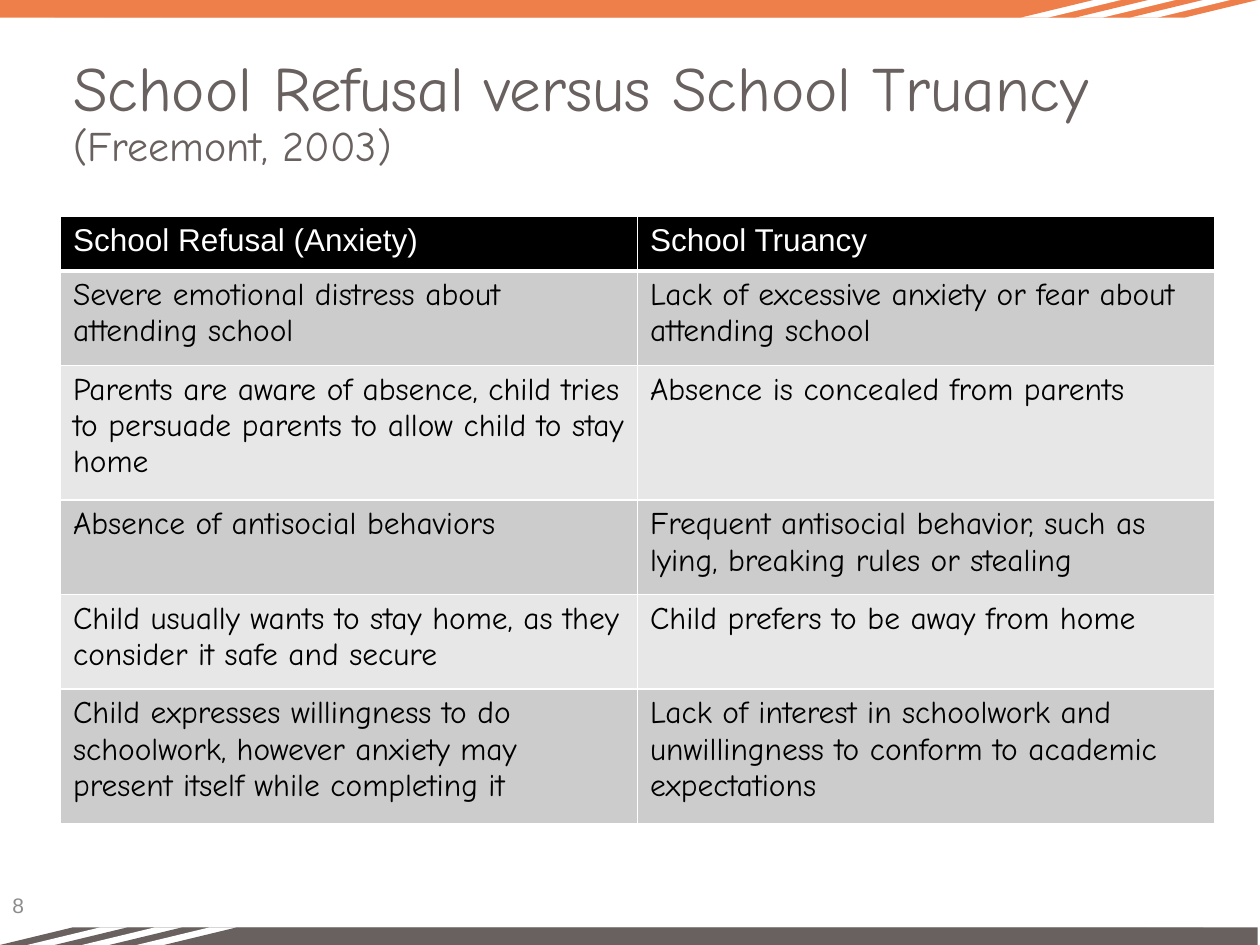
from lxml import etree
from pptx import Presentation
from pptx.dml.color import RGBColor
from pptx.enum.text import MSO_ANCHOR, MSO_AUTO_SIZE, PP_ALIGN
from pptx.oxml.ns import qn
from pptx.util import Inches, Pt

MIDDLE = MSO_ANCHOR.MIDDLE
NO_AUTOFIT = MSO_AUTO_SIZE.NONE
LEFT = PP_ALIGN.LEFT

TITLE = "School Refusal versus School Truancy"
CITATION = "(Freemont, 2003)"
PAGE_NUMBER = "8"
ROWS = [
    ("School Refusal (Anxiety)", "School Truancy"),
    ("Severe emotional distress about attending school",
     "Lack of excessive anxiety or fear about attending school"),
    ("Parents are aware of absence, child tries to persuade parents to allow child to stay home",
     "Absence is concealed from parents"),
    ("Absence of antisocial behaviors",
     "Frequent antisocial behavior, such as lying, breaking rules or stealing"),
    ("Child usually wants to stay home, as they consider it safe and secure",
     "Child prefers to be away from home"),
    ("Child expresses willingness to do schoolwork, however anxiety may present itself "
     "while completing it",
     "Lack of interest in schoolwork and unwillingness to conform to academic expectations"),
]
ROW_HEIGHTS = [0.43, 0.75, 1.07, 0.75, 0.75, 1.07]
COLUMN_WIDTH = 4.58

COLORS = {
    "orange": "EE7F4B", "brown": "69615F", "white": "FFFFFF", "black": "000000",
    "dark_band": "CCCCCC", "light_band": "E7E7E7", "number": "8C8C8C",
}
HEADING_FONT = "Arial"
BODY_FONT = "Comic Neue"

PAGE_HEIGHT = 7.5
STRIPE_COUNT = 7
STRIPE_STEP = 0.217
STRIPE_WIDTH = 8.68
STRIPE_HEIGHT = 0.14
STRIPE_SLANT = 0.58


def color(name):
    return RGBColor.from_string(COLORS[name])


def set_font(font, name, size, color_name):
    font.name = name
    font.size = Pt(size)
    font.color.rgb = color(color_name)


def add_stripe(slide, points, color_name):
    start, *others = [(Inches(x), Inches(y)) for x, y in points]
    builder = slide.shapes.build_freeform(*start)
    builder.add_line_segments(others, close=True)
    stripe = builder.convert_to_shape()
    stripe.shadow.inherit = False
    stripe.fill.solid()
    stripe.fill.fore_color.rgb = color(color_name)
    stripe.line.fill.background()


def add_bands(slide):
    inner = PAGE_HEIGHT - STRIPE_HEIGHT
    offsets = [index * STRIPE_STEP for index in range(STRIPE_COUNT)]
    for index in reversed(range(STRIPE_COUNT)):
        left, right = offsets[index], offsets[index] + STRIPE_WIDTH
        points = [(left, 0), (right, 0), (right - STRIPE_SLANT, STRIPE_HEIGHT),
                  (left, STRIPE_HEIGHT)]
        add_stripe(slide, points, "white" if index % 2 else "orange")
    for index in range(STRIPE_COUNT):
        left, right = offsets[index], offsets[index] + STRIPE_WIDTH
        points = [(right, inner), (left + STRIPE_SLANT, inner), (left, PAGE_HEIGHT),
                  (right, PAGE_HEIGHT)]
        add_stripe(slide, points, "white" if index % 2 else "brown")


def set_borders(cell, bottom_width):
    properties = cell._tc.get_or_add_tcPr()
    widths = {"a:lnL": 1, "a:lnR": 1, "a:lnT": 1, "a:lnB": bottom_width}
    for position, (tag, width) in enumerate(widths.items()):
        line = etree.Element(qn(tag), w=str(Pt(width)))
        fill = etree.SubElement(line, qn("a:solidFill"))
        etree.SubElement(fill, qn("a:srgbClr"), val=COLORS["white"])
        properties.insert(position, line)


def add_title(slide):
    title = slide.shapes.title
    title.left, title.top = Inches(0.48), Inches(0.29)
    title.width, title.height = Inches(9.17), Inches(1.22)
    frame = title.text_frame
    frame.auto_size = NO_AUTOFIT
    frame.vertical_anchor = MIDDLE
    para = frame.paragraphs[0]
    para.alignment = LEFT
    para.line_spacing = 0.9
    set_font(para.font, BODY_FONT, 36, "brown")
    para.add_run().text = TITLE
    para.add_line_break()
    span = para.add_run()
    span.text = CITATION
    span.font.size = Pt(24)


def add_comparison(slide):
    table = slide.shapes.add_table(
        len(ROWS), len(ROWS[0]), Inches(0.48), Inches(1.72),
        Inches(COLUMN_WIDTH * len(ROWS[0])), Inches(sum(ROW_HEIGHTS))).table
    for column in table.columns:
        column.width = Inches(COLUMN_WIDTH)
    for row_index, texts in enumerate(ROWS):
        table.rows[row_index].height = Inches(ROW_HEIGHTS[row_index])
        header = row_index == 0
        band = "black" if header else "dark_band" if row_index % 2 else "light_band"
        for column_index, text in enumerate(texts):
            cell = table.cell(row_index, column_index)
            cell.text = text
            cell.fill.solid()
            cell.fill.fore_color.rgb = color(band)
            set_borders(cell, 3 if header else 1)
            font = cell.text_frame.paragraphs[0].font
            font.bold = False
            set_font(font, HEADING_FONT if header else BODY_FONT, 18,
                     "white" if header else "black")


def add_page_number(slide):
    box = slide.shapes.add_textbox(Inches(0), Inches(6.98), Inches(2.25), Inches(0.4))
    frame = box.text_frame
    frame.word_wrap = True
    frame.vertical_anchor = MIDDLE
    para = frame.paragraphs[0]
    para.text = PAGE_NUMBER
    set_font(para.font, HEADING_FONT, 12, "number")


def main():
    deck = Presentation()
    deck.slide_width, deck.slide_height = Inches(10), Inches(PAGE_HEIGHT)
    slide = deck.slides.add_slide(deck.slide_layouts[5])
    add_bands(slide)
    add_title(slide)
    add_comparison(slide)
    add_page_number(slide)
    deck.save("out.pptx")


if __name__ == "__main__":
    main()
